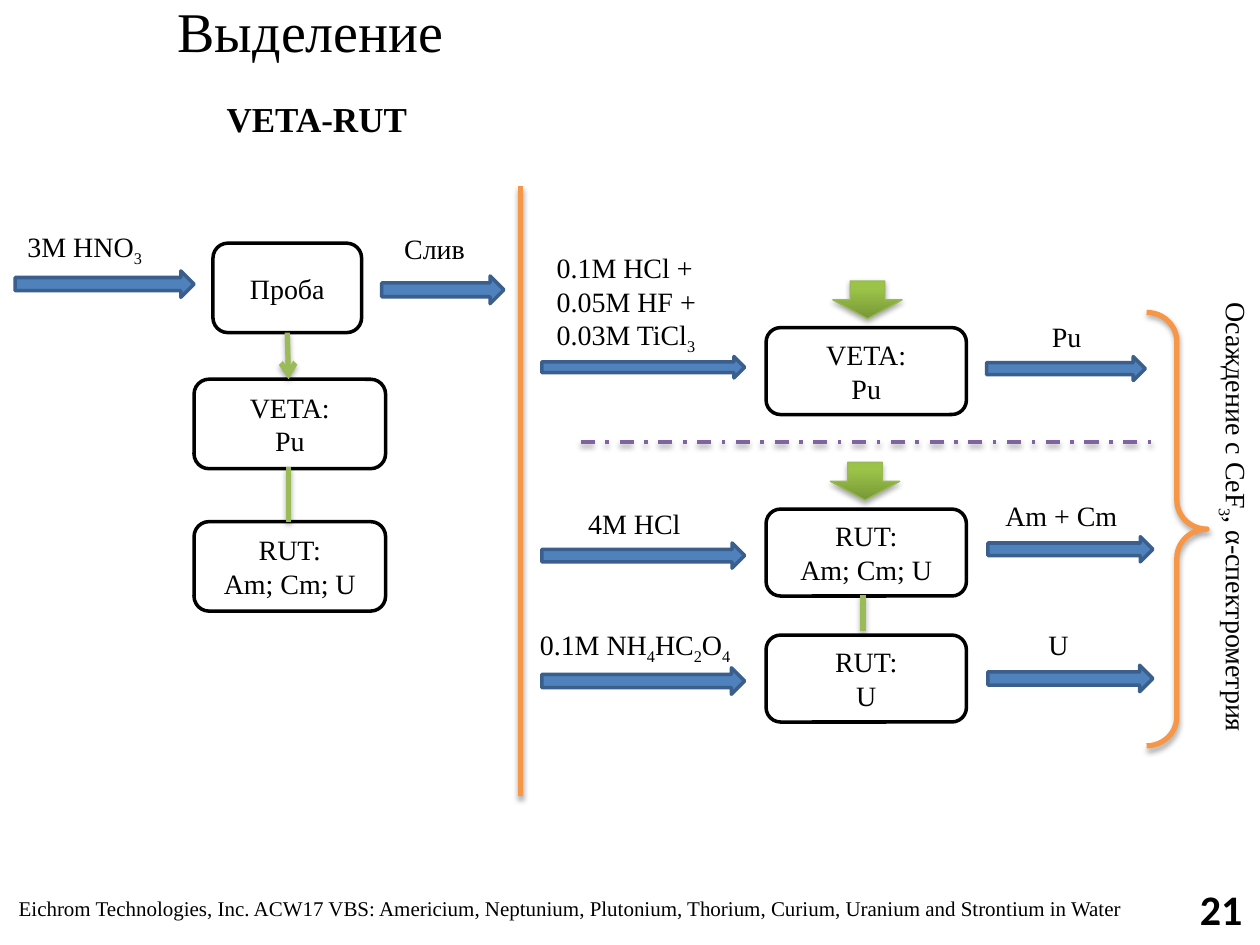
from dataclasses import dataclass

from lxml.etree import SubElement
from pptx import Presentation
from pptx.dml.color import RGBColor
from pptx.enum.dml import MSO_LINE
from pptx.enum.shapes import MSO_CONNECTOR, MSO_SHAPE as Shape
from pptx.enum.text import MSO_ANCHOR as Anchor, PP_ALIGN as Align
from pptx.oxml.ns import qn
from pptx.util import Inches, Pt


@dataclass(frozen=True)
class Theme:
    font: str = "Times New Roman"
    number_font: str = "Calibri"
    ink: str = "000000"
    paper: str = "FFFFFF"
    flow: str = "4F81BD"
    flow_edge: str = "3A5F8C"
    link: str = "9BBB59"
    drop_edge: str = "98B955"
    drop_dark: str = "779737"
    drop_light: str = "9BC348"
    frame: str = "F79646"
    divider: str = "8064A2"
    body: int = 16
    title: int = 32
    subtitle: int = 20
    footer: int = 12
    number: int = 24


THEME = Theme()

# An underscore puts the next character in subscript.
TITLE = "Выделение"
SUBTITLE = "VETA-RUT"
FOOTER = ("Eichrom Technologies, Inc. ACW17 VBS: Americium, Neptunium, Plutonium, "
          "Thorium, Curium, Uranium and Strontium in Water")
NUMBER = "21"
RESULT = "Осаждение с CeF_3, α-спектрометрия"

# Columns of the right-hand scheme: left, width
FEED, COLUMN, PRODUCT = (4.3, 1.61), (6.08, 1.59), (7.84, 1.31)
LEFT_COLUMN = (1.54, 1.52)
LEFT_HEIGHT, RIGHT_HEIGHT = 0.71, 0.69

# Boxes: column, top, height, lines
BOXES = [
    ((1.69, 1.18), 1.93, LEFT_HEIGHT, ["Проба"]),
    (LEFT_COLUMN, 3.01, LEFT_HEIGHT, ["VETA:", "Pu"]),
    (LEFT_COLUMN, 4.14, LEFT_HEIGHT, ["RUT:", "Am; Cm; U"]),
    (COLUMN, 2.6, RIGHT_HEIGHT, ["VETA:", "Pu"]),
    (COLUMN, 4.04, RIGHT_HEIGHT, ["RUT:", "Am; Cm; U"]),
    (COLUMN, 5.04, RIGHT_HEIGHT, ["RUT:", "U"]),
]
# Flow arrows: column, top, height
FLOWS = [
    ((0.12, 1.42), 2.15, 0.21), ((3.03, 0.97), 2.19, 0.22),
    (FEED, 2.83, 0.17), (FEED, 4.31, 0.2), (FEED, 5.3, 0.21),
    ((7.83, 1.26), 2.83, 0.19), (PRODUCT, 4.26, 0.2), (PRODUCT, 5.28, 0.21),
]
DROPS = [(6.61, 2.23), (6.59, 3.67)]
# Labels: left, top, width, height, alignment, lines
LABELS = [
    (0.12, 1.77, 1.46, 0.37, Align.LEFT, ["3M HNO_3"]),
    (3.11, 1.79, 0.86, 0.37, Align.LEFT, ["Слив"]),
    (4.32, 1.94, 1.7, 0.91, Align.LEFT, ["0.1M HCl + 0.05M HF +", "0.03M TiCl_3"]),
    (4.57, 3.97, 1.06, 0.37, Align.LEFT, ["4M HCl"]),
    (4.14, 4.93, 1.8, 0.37, Align.CENTER, ["0.1M NH_4HC_2O_4"]),
    (7.91, 2.49, 1.11, 0.37, Align.CENTER, ["Pu"]),
    (7.88, 3.91, 1.22, 0.37, Align.LEFT, ["Am + Cm"]),
    (8.1, 4.93, 0.6, 0.37, Align.CENTER, ["U"]),
]
# Lines: start, end, colour, width, dash, arrowhead
LINES = [
    ((2.28, 2.64), (2.29, 3.01), THEME.link, 3, None, True),
    ((2.29, 3.71), (2.29, 4.14), THEME.link, 3, None, False),
    ((6.85, 4.72), (6.85, 5.01), THEME.link, 3, None, False),
    ((4.13, 1.48), (4.13, 6.32), THEME.frame, 3, None, False),
    ((4.61, 3.51), (9.18, 3.51), THEME.divider, 2, MSO_LINE.DASH_DOT, False),
]


def color(value):
    return RGBColor.from_string(value)


def write(frame, lines, size=THEME.body, align=Align.LEFT, font=THEME.font,
          bold=False, **frame_format):
    for name, value in {"word_wrap": True, **frame_format}.items():
        setattr(frame, name, value)
    for index, line in enumerate(lines):
        paragraph = frame.add_paragraph() if index else frame.paragraphs[0]
        paragraph.alignment = align
        first, *rest = line.split("_")
        pieces = [(first, False)]
        for part in rest:
            pieces += [(part[0], True), (part[1:], False)]
        for text, subscript in pieces:
            if not text:
                continue
            run = paragraph.add_run()
            run.text = text
            for name, value in {"name": font, "size": Pt(size), "bold": bold}.items():
                setattr(run.font, name, value)
            run.font.color.rgb = color(THEME.ink)
            if subscript:
                run.font._element.set("baseline", "-25000")


def add_label(slide, box, lines, **text_format):
    shape = slide.shapes.add_textbox(*map(Inches, box))
    write(shape.text_frame, lines, **text_format)
    return shape


def add_figure(slide, kind, box, edge, width=2, fill=None):
    shape = slide.shapes.add_shape(kind, *map(Inches, box))
    shape.shadow.inherit = False
    shape.line.color.rgb = color(edge)
    shape.line.width = Pt(width)
    if fill:
        shape.fill.solid()
        shape.fill.fore_color.rgb = color(fill)
    else:
        shape.fill.background()
    return shape


def cast_shadow(shape):
    properties = shape._element.spPr
    effects = properties.find(qn("a:effectLst"))
    if effects is None:
        effects = SubElement(properties, qn("a:effectLst"))
    shadow = SubElement(effects, qn("a:outerShdw"), blurRad="40000", dist="23000",
                        dir="5400000", rotWithShape="0")
    tint = SubElement(shadow, qn("a:srgbClr"), val=THEME.ink)
    SubElement(tint, qn("a:alpha"), val="35000")


def add_line(slide, start, end, tint, width, dash, arrowhead):
    connector = slide.shapes.add_connector(
        MSO_CONNECTOR.STRAIGHT, *map(Inches, start + end))
    connector.line.color.rgb = color(tint)
    connector.line.width = Pt(width)
    if dash:
        connector.line.dash_style = dash
    if arrowhead:
        SubElement(connector.line._get_or_add_ln(), qn("a:tailEnd"), type="arrow")
    cast_shadow(connector)


def add_drop(slide, left, top):
    drop = add_figure(slide, Shape.DOWN_ARROW, (left, top, 0.55, 0.3),
                      THEME.drop_edge, 0.75)
    drop.fill.gradient()
    drop.fill.gradient_angle = 90
    stops = [(0, THEME.drop_dark), (0.8, THEME.drop_light)]
    for stop, (position, tint) in zip(drop.fill.gradient_stops, stops):
        stop.position = position
        stop.color.rgb = color(tint)
    cast_shadow(drop)


def main():
    presentation = Presentation()
    presentation.slide_width, presentation.slide_height = Inches(10), Inches(7.5)
    slide = presentation.slides.add_slide(presentation.slide_layouts[5])

    title = slide.shapes.title
    title.left, title.top, title.width, title.height = map(
        Inches, (1.31, -0.08, 2.34, 0.64))
    write(title.text_frame, [TITLE], size=THEME.title, word_wrap=False,
          vertical_anchor=Anchor.TOP)
    add_label(slide, (1.7, 0.59, 7.33, 0.7), [SUBTITLE], size=THEME.subtitle,
              bold=True, vertical_anchor=Anchor.MIDDLE)
    add_label(slide, (0.05, 7.06, 9.06, 0.3), [FOOTER], size=THEME.footer)
    add_label(slide, (7.63, 7.01, 2.33, 0.4), [NUMBER], size=THEME.number,
              font=THEME.number_font, bold=True, align=Align.RIGHT,
              vertical_anchor=Anchor.MIDDLE)

    for (left, width), top, height, lines in BOXES:
        box = add_figure(slide, Shape.ROUNDED_RECTANGLE, (left, top, width, height),
                         THEME.ink, fill=THEME.paper)
        write(box.text_frame, lines, align=Align.CENTER, vertical_anchor=Anchor.MIDDLE,
              margin_left=0, margin_right=0, margin_top=0, margin_bottom=0)
    for (left, width), top, height in FLOWS:
        add_figure(slide, Shape.RIGHT_ARROW, (left, top, width, height),
                   THEME.flow_edge, fill=THEME.flow)
    for left, top in DROPS:
        add_drop(slide, left, top)
    for line in LINES:
        add_line(slide, *line)
    for *box, align, lines in LABELS:
        add_label(slide, box, lines, align=align)

    result = add_label(slide, (7.71, 4.22, 4.21, 0.37), [RESULT])
    result.rotation = 90
    brace = add_figure(slide, Shape.RIGHT_BRACE, (9.1, 2.48, 0.48, 3.44), THEME.frame, 3)
    brace.adjustments[0] = 0.48
    cast_shadow(brace)

    presentation.save("out.pptx")


if __name__ == "__main__":
    main()
